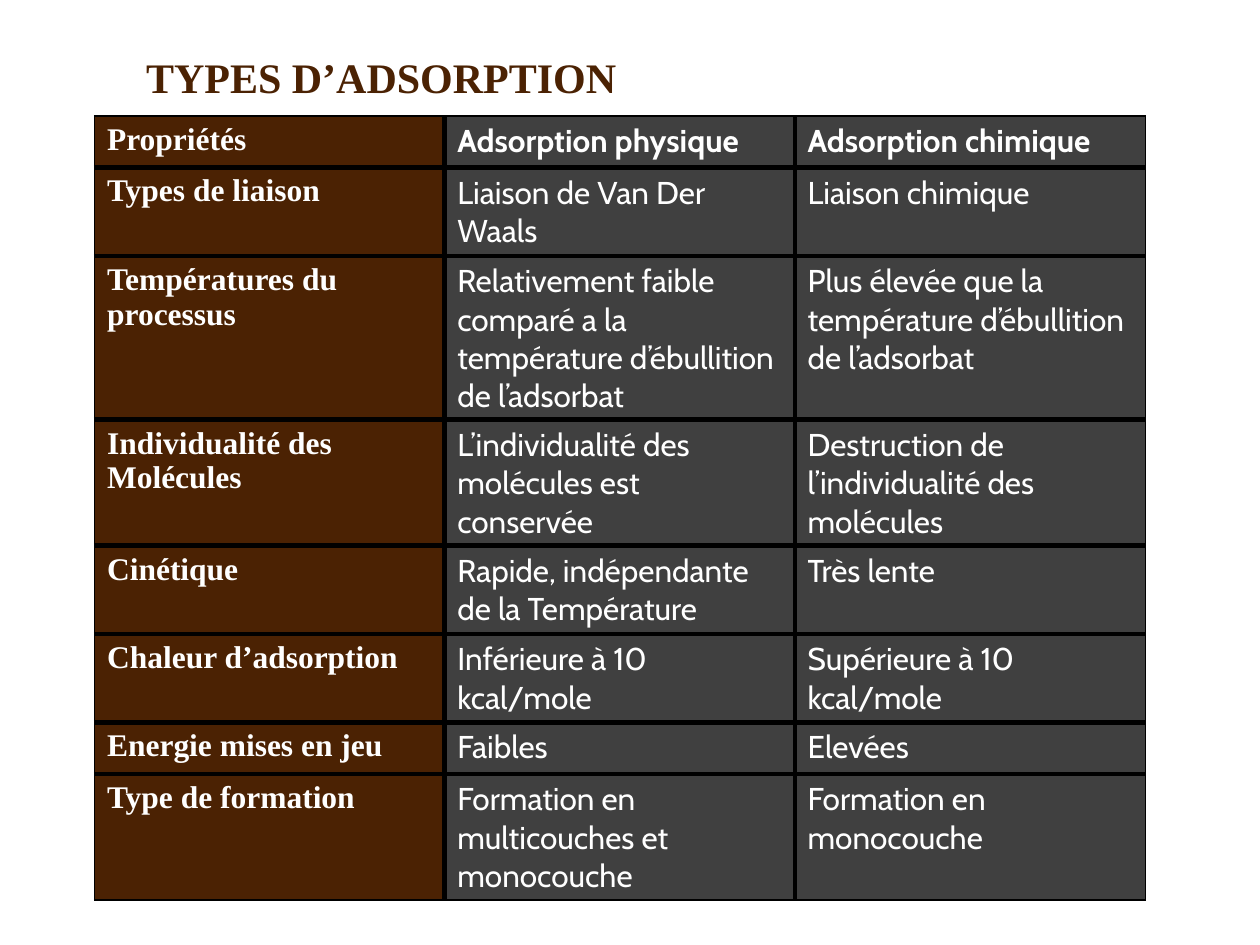
"""Build a slide with a table comparing physical and chemical adsorption."""
from lxml.etree import SubElement
from pptx import Presentation
from pptx.dml.color import RGBColor
from pptx.enum.text import MSO_ANCHOR as Anchor, MSO_AUTO_SIZE as AutoSize, PP_ALIGN as Align
from pptx.oxml.ns import qn
from pptx.util import Inches, Pt

BROWN = RGBColor(0x4B, 0x22, 0x03)
GRAY = RGBColor(0x40, 0x40, 0x40)
WHITE = RGBColor(0xFF, 0xFF, 0xFF)
BLACK = RGBColor(0x00, 0x00, 0x00)
SERIF = "Times New Roman"
SANS = "Cabin"
OUTER, INNER = Pt(1), Pt(3)

ROWS = [
    ("Propriétés", "Adsorption physique", "Adsorption chimique"),
    ("Types de liaison", "Liaison de Van Der Waals", "Liaison chimique"),
    ("Températures du processus",
     "Relativement faible comparé a la température d’ébullition de l’adsorbat",
     "Plus élevée que la température d’ébullition de l’adsorbat"),
    ("Individualité des Molécules", "L’individualité des molécules est conservée",
     "Destruction de l’individualité des molécules"),
    ("Cinétique", "Rapide, indépendante de la Température", "Très lente"),
    ("Chaleur d’adsorption", "Inférieure à 10 kcal/mole", "Supérieure à 10 kcal/mole"),
    ("Energie mises en jeu", "Faibles", "Elevées"),
    ("Type de formation", "Formation en multicouches et monocouche",
     "Formation en monocouche"),
]


def apply(target, values):
    for name, value in values.items():
        setattr(target, name, value)


class SlideBuilder:
    def __init__(self, presentation):
        self.slide = presentation.slides.add_slide(presentation.slide_layouts[5])

    def add_text(self, frame, text, color, **font):
        paragraph = frame.paragraphs[0]
        paragraph.alignment = Align.LEFT
        run = paragraph.add_run()
        run.text = text
        apply(run.font, font)
        run.font.color.rgb = color

    def title(self, text, left, top, width, height):
        shape = self.slide.shapes.title
        apply(shape, {"left": left, "top": top, "width": width, "height": height})
        apply(shape.text_frame, {"word_wrap": True, "vertical_anchor": Anchor.TOP,
                                 "auto_size": AutoSize.SHAPE_TO_FIT_TEXT})
        self.add_text(shape.text_frame, text, BROWN, name=SERIF, size=Pt(24), bold=True)

    def border(self, cell, side, width):
        properties = cell._tc.get_or_add_tcPr()
        line = SubElement(properties, qn(f"a:ln{side}"), w=str(width))
        fill = SubElement(line, qn("a:solidFill"))
        SubElement(fill, qn("a:srgbClr"), val=str(BLACK))

    def table(self, rows, left, top, column_width, row_height):
        row_count, column_count = len(rows), len(rows[0])
        table = self.slide.shapes.add_table(
            row_count, column_count, left, top,
            column_width * column_count, row_height * row_count).table
        for column in table.columns:
            column.width = column_width
        for i, texts in enumerate(rows):
            table.rows[i].height = row_height
            for j, text in enumerate(texts):
                cell = table.cell(i, j)
                edges = {"L": j == 0, "R": j == column_count - 1,
                         "T": i == 0, "B": i == row_count - 1}
                for side, is_outer in edges.items():
                    self.border(cell, side, OUTER if is_outer else INNER)
                cell.fill.solid()
                cell.fill.fore_color.rgb = BROWN if j == 0 else GRAY
                self.add_text(cell.text_frame, text, WHITE, name=SERIF if j == 0 else SANS,
                              size=Pt(18), bold=i == 0 or j == 0)


def main():
    presentation = Presentation()
    apply(presentation, {"slide_width": Inches(10), "slide_height": Inches(7.5)})
    builder = SlideBuilder(presentation)
    builder.title("TYPES D’ADSORPTION", Inches(1.06), Inches(0.36), Inches(6.22), Inches(0.5))
    builder.table(ROWS, Inches(0.75), Inches(0.92), Inches(2.78), Inches(0.41))
    presentation.save("out.pptx")


if __name__ == "__main__":
    main()
